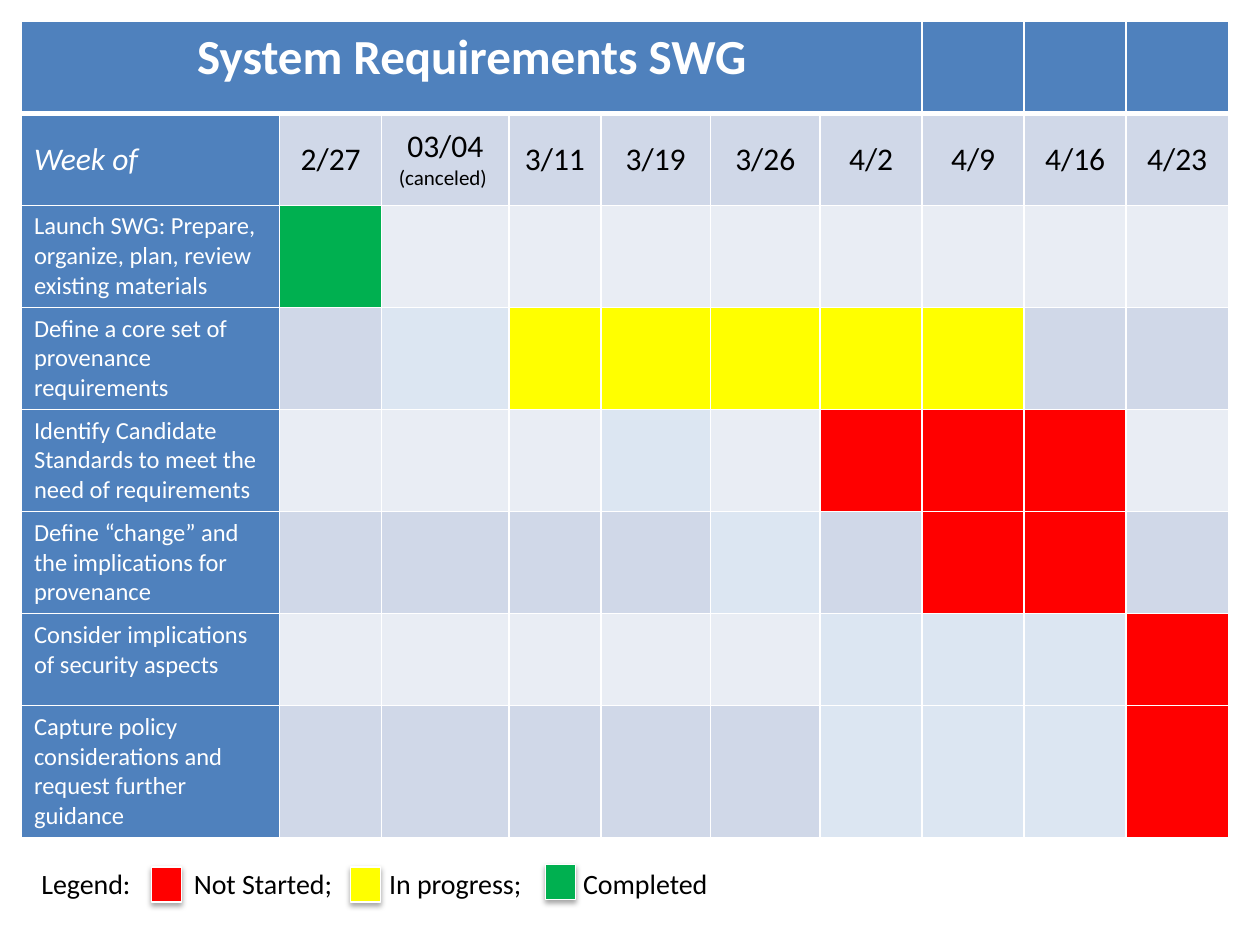
from lxml import etree
from pptx import Presentation
from pptx.dml.color import RGBColor
from pptx.enum import shapes, text
from pptx.oxml import ns
from pptx.util import Inches, Pt

BLUE = RGBColor(0x4F, 0x81, 0xBD)
BAND = RGBColor(0xD0, 0xD8, 0xE8)
LIGHT = RGBColor(0xE9, 0xED, 0xF4)
PALE = RGBColor(0xDC, 0xE6, 0xF2)
GREEN = RGBColor(0x00, 0xB0, 0x50)
YELLOW = RGBColor(0xFF, 0xFF, 0x00)
RED = RGBColor(0xFF, 0x00, 0x00)
WHITE = RGBColor(0xFF, 0xFF, 0xFF)
BLACK = RGBColor(0x00, 0x00, 0x00)

FILLS = {"B": BAND, "L": LIGHT, "P": PALE, "G": GREEN, "Y": YELLOW, "R": RED}
WIDTHS = [2.05, 0.81, 1.01, 0.73, 0.87, 0.87] + [0.81] * 4
HEIGHTS = [0.73] * 2 + [0.81] * 4 + [0.73, 1.05]
WEEKS = ["2/27", "03/04 ", "3/11", "3/19", "3/26", "4/2", "4/9", "4/16", "4/23"]
TASKS = [
    ("Launch SWG: Prepare, organize, plan, review existing materials", "GLLLLLLLL"),
    ("Define a core set of provenance requirements", "BPYYYYYBB"),
    ("Identify Candidate Standards to meet the need of requirements", "LLLPLRRRL"),
    ("Define “change” and the implications for provenance", "BBBBPBRRB"),
    ("Consider implications of security aspects", "LLLLLPPPR"),
    ("Capture policy considerations and request further guidance", "BBBBBPPPR"),
]
LEGEND = ["Legend:", "Not Started;", "In progress;", "Completed"]
TABS = [1.21, 2.76, 4.3]
KEYS = [(1.2, 6.88, RED), (2.78, 6.88, YELLOW), (4.33, 6.86, GREEN)]


def add(parent, tag, **attrs):
    node = etree.SubElement(parent, ns.qn(tag))
    for name, value in attrs.items():
        node.set(name, str(value))
    return node


class Deck:
    font = "Calibri"

    def __init__(self):
        self.prs = Presentation()
        self.prs.slide_width = Inches(10)
        self.prs.slide_height = Inches(7.5)
        self.slide = self.prs.slides.add_slide(self.prs.slide_layouts[6])

    def run(self, para, words, size, color, bold=False, italic=False):
        run = para.add_run()
        run.text = words
        font = run.font
        font.name, font.size = self.font, Pt(size)
        font.bold, font.italic = bold, italic
        font.color.rgb = color

    def table(self, left, top, widths, heights):
        frame = self.slide.shapes.add_table(
            len(heights), len(widths), Inches(left), Inches(top),
            Inches(sum(widths)), Inches(sum(heights)))
        grid = frame.table
        grid.first_row = grid.horz_banding = False
        for col, width in zip(grid.columns, widths):
            col.width = Inches(width)
        for row, height in zip(grid.rows, heights):
            row.height = Inches(height)
        return grid

    def cell(self, cell, fill, top=1, bottom=1, middle=False, center=False):
        props = cell._tc.get_or_add_tcPr()
        for side, width in zip("LRTB", (1, 1, top, bottom)):
            line = add(props, f"a:ln{side}", w=Pt(width))
            add(add(line, "a:solidFill"), "a:srgbClr", val=WHITE)
        cell.fill.solid()
        cell.fill.fore_color.rgb = fill
        if middle:
            cell.vertical_anchor = text.MSO_ANCHOR.MIDDLE
        para = cell.text_frame.paragraphs[0]
        if center:
            para.alignment = text.PP_ALIGN.CENTER
        return para

    def box(self, left, top, width, height, fill):
        shape = self.slide.shapes.add_shape(
            shapes.MSO_SHAPE.RECTANGLE, Inches(left), Inches(top),
            Inches(width), Inches(height))
        shape.shadow.inherit = False
        shape.fill.solid()
        shape.fill.fore_color.rgb = fill
        shape.line.fill.background()
        return shape

    def legend(self, left, top, width, height, labels, tabs):
        frame = self.box(left, top, width, height, WHITE).text_frame
        frame.word_wrap = True
        frame.vertical_anchor = text.MSO_ANCHOR.TOP
        para = frame.paragraphs[0]
        para.alignment = text.PP_ALIGN.LEFT
        stops = add(para._p.get_or_add_pPr(), "a:tabLst")
        for tab in tabs:
            add(stops, "a:tab", pos=Inches(tab), algn="l")
        for i, label in enumerate(labels):
            self.run(para, "\t" * (i > 0) + label, 16, BLACK)

    def key(self, left, top, fill):
        shape = self.box(left, top, 0.24, 0.28, fill)
        shape.line.color.rgb = WHITE
        shape.line.width = Pt(0.75)
        effects = shape._element.spPr.find(ns.qn("a:effectLst"))
        shade = add(effects, "a:outerShdw", blurRad=Pt(3.1), dist=Pt(1.8),
                    dir=90 * 60000, rotWithShape=0)
        add(add(shade, "a:srgbClr", val=BLACK), "a:alpha", val=35000)


def main():
    deck = Deck()
    grid = deck.table(0.17, 0.17, WIDTHS, HEIGHTS)
    for col in range(len(WIDTHS)):
        deck.cell(grid.cell(0, col), BLUE, bottom=3, center=col == 0)
    grid.cell(0, 0).merge(grid.cell(0, 6))
    title = grid.cell(0, 0).text_frame.paragraphs[0]
    deck.run(title, "System Requirements SWG", 28, WHITE, bold=True)

    para = deck.cell(grid.cell(1, 0), BLUE, top=3, middle=True)
    deck.run(para, "Week of", 18, WHITE, italic=True)
    for col, week in enumerate(WEEKS, 1):
        para = deck.cell(grid.cell(1, col), BAND, top=3, middle=True, center=True)
        deck.run(para, week, 18, BLACK)
        if col == 2:
            deck.run(para, "(canceled) ", 12, BLACK)

    for row, (task, states) in enumerate(TASKS, 2):
        deck.run(deck.cell(grid.cell(row, 0), BLUE), task, 14, WHITE)
        for col, state in enumerate(states, 1):
            deck.cell(grid.cell(row, col), FILLS[state])

    deck.legend(0.23, 6.83, 7.06, 0.37, LEGEND, TABS)
    for left, top, fill in KEYS:
        deck.key(left, top, fill)
    deck.prs.save("out.pptx")


if __name__ == "__main__":
    main()
